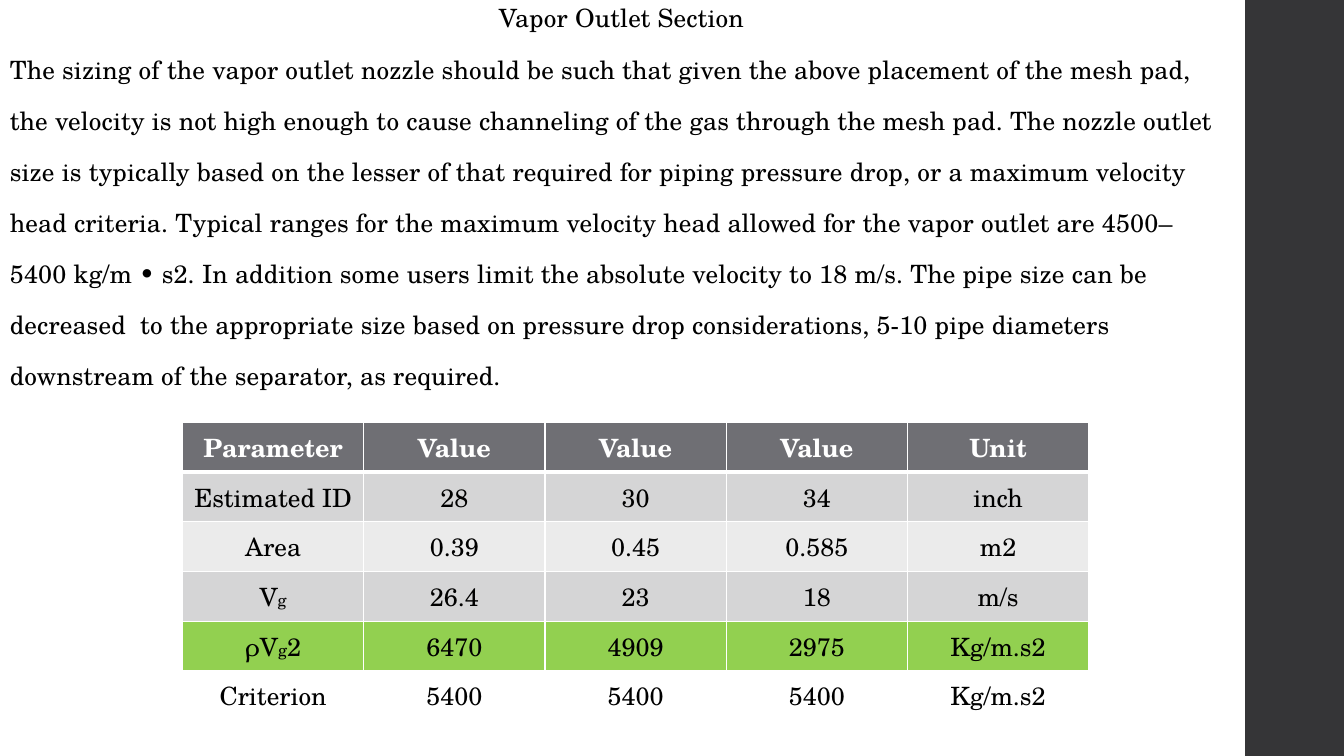
from lxml import etree
from pptx import Presentation
from pptx.dml.color import RGBColor
from pptx.enum import shapes, text
from pptx.oxml import ns
from pptx.util import Inches, Pt

FONT = "TeX Gyre Schola"
BLACK = RGBColor(0x00, 0x00, 0x00)
WHITE = RGBColor(0xFF, 0xFF, 0xFF)
CHARCOAL = RGBColor(0x35, 0x35, 0x37)
HEADER_GRAY = RGBColor(0x6F, 0x6F, 0x74)
DARK_BAND = RGBColor(0xD5, 0xD5, 0xD6)
LIGHT_BAND = RGBColor(0xEB, 0xEB, 0xEB)
GREEN = RGBColor(0x92, 0xD0, 0x50)


def add_span(para, words, size=18, color=BLACK, bold=False, spacing=None):
    span = para.add_run()
    span.text = words
    span.font.name = FONT
    span.font.size = Pt(size)
    span.font.color.rgb = color
    span.font.bold = bold
    if spacing:
        span._r.get_or_add_rPr().set("spc", str(round(spacing * 100)))


def add_borders(cell, **widths):
    """Draw white cell borders; widths in points, keyed L, R, T, B."""
    properties = cell._tc.get_or_add_tcPr()
    for position, side in enumerate("LRTB"):
        line = etree.Element(ns.qn(f"a:ln{side}"), w=str(Pt(widths.get(side, 1))))
        fill = etree.SubElement(line, ns.qn("a:solidFill"))
        etree.SubElement(fill, ns.qn("a:srgbClr"), val=str(WHITE))
        properties.insert(position, line)


deck = Presentation()
deck.slide_width = Inches(13.33)
deck.slide_height = Inches(7.5)
page = deck.slides.add_slide(deck.slide_layouts[6])

# Side band
band = page.shapes.add_shape(
    shapes.MSO_SHAPE.RECTANGLE, Inches(12.35), 0, Inches(1), Inches(7.5))
band.shadow.inherit = False
band.fill.solid()
band.fill.fore_color.rgb = CHARCOAL
band.line.fill.background()

# Heading and body text
body_lines = [
    "Vapor Outlet Section",
    "The sizing of the vapor outlet nozzle should be such that given the above placement of the mesh pad,",
    "the velocity is not high enough to cause channeling of the gas through the mesh pad. The nozzle outlet",
    "size is typically based on the lesser of that required for piping pressure drop, or a maximum velocity",
    "head criteria. Typical ranges for the maximum velocity head allowed for the vapor outlet are 4500–",
    "5400 kg/m • s2. In addition some users limit the absolute velocity to 18 m/s. The pipe size can be",
    "decreased  to the appropriate size based on pressure drop considerations, 5-10 pipe diameters",
    "downstream of the separator, as required.",
]
box = page.shapes.add_textbox(0, 0, Inches(12.33), Inches(7.5))
frame = box.text_frame
frame.word_wrap = True
for index, words in enumerate(body_lines):
    para = frame.add_paragraph() if index else frame.paragraphs[0]
    para.alignment = text.PP_ALIGN.LEFT if index else text.PP_ALIGN.CENTER
    para.line_spacing = 0.95
    para.space_before = Pt(14)
    para.space_after = Pt(2)
    add_span(para, words, spacing=0.1)

# Nozzle sizing table: row fill, then cells; a tuple marks (text, small g, text)
rows = [
    (HEADER_GRAY, ["Parameter", "Value", "Value", "Value", "Unit"]),
    (DARK_BAND, ["Estimated ID", "28", "30", "34", "inch"]),
    (LIGHT_BAND, ["Area", "0.39", "0.45", "0.585", "m2"]),
    (DARK_BAND, [("V", "g"), "26.4", "23", "18", "m/s"]),
    (GREEN, [("ρV", "g", "2"), "6470", "4909", "2975", "Kg/m.s2"]),
    (WHITE, ["Criterion", "5400", "5400", "5400", "Kg/m.s2"]),
]
table = page.shapes.add_table(
    len(rows), 5, Inches(1.81), Inches(4.19), Inches(8.99), Inches(2.96)).table
for row_index, (fill, entries) in enumerate(rows):
    is_header = row_index == 0
    for column_index, entry in enumerate(entries):
        cell = table.cell(row_index, column_index)
        cell.vertical_anchor = text.MSO_ANCHOR.MIDDLE
        cell.fill.solid()
        cell.fill.fore_color.rgb = fill
        add_borders(cell, B=3 if is_header else 1, T=3 if row_index == 1 else 1)
        para = cell.text_frame.paragraphs[0]
        para.alignment = text.PP_ALIGN.CENTER
        for words in entry if isinstance(entry, tuple) else (entry,):
            add_span(para, words, size=12 if words == "g" else 18,
                     color=WHITE if is_header else BLACK, bold=is_header)

deck.save("out.pptx")
